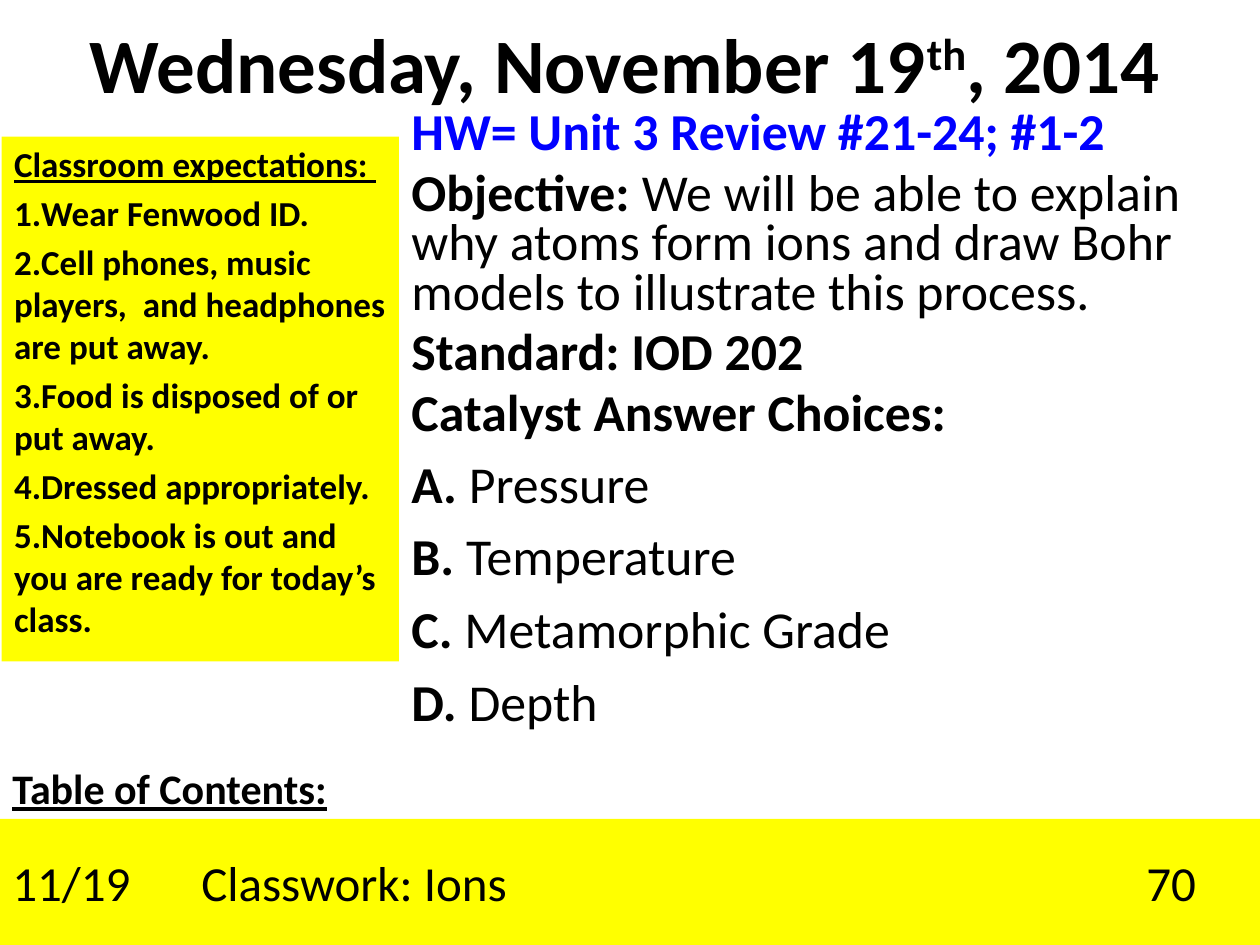
from dataclasses import dataclass, field

from lxml import etree
from pptx import Presentation
from pptx import util as u
from pptx.dml.color import RGBColor
from pptx.enum import shapes, text
from pptx.oxml import ns

BLACK = RGBColor(0, 0, 0)
BLUE = RGBColor(0, 0, 255)
YELLOW = RGBColor(255, 255, 0)
FONT = "Calibri"


@dataclass
class Run:
    words: str
    fmt: dict = field(default_factory=dict)
    raised: bool = False


@dataclass
class Para:
    runs: list[Run]
    fmt: dict = field(default_factory=dict)
    number: bool = False
    tabs: tuple[float, ...] = ()


@dataclass
class Box:
    left: float
    top: float
    width: float
    height: float
    size: float
    paras: list[Para]
    anchor: text.MSO_ANCHOR = text.MSO_ANCHOR.TOP
    fill: RGBColor | None = None


def apply(target, fmt: dict) -> None:
    for name, value in fmt.items():
        setattr(target, name, value)


def write(frame, box: Box) -> None:
    apply(frame, {"word_wrap": True, "auto_size": text.MSO_AUTO_SIZE.NONE,
                  "vertical_anchor": box.anchor})
    for i, para in enumerate(box.paras):
        p = frame.paragraphs[0] if i == 0 else frame.add_paragraph()
        apply(p, {"alignment": text.PP_ALIGN.LEFT} | para.fmt)
        props = p._p.get_or_add_pPr()
        if para.number:
            props.set("marL", "0")
            props.set("indent", "0")
            etree.SubElement(props, ns.qn("a:buAutoNum"), type="arabicPeriod")
        if para.tabs:
            stops = etree.SubElement(props, ns.qn("a:tabLst"))
            for pos in para.tabs:
                etree.SubElement(stops, ns.qn("a:tab"),
                                 pos=str(u.Pt(pos)), algn="l")
        for part in para.runs:
            run = p.add_run()
            run.text = part.words
            apply(run.font, {"name": FONT, "size": u.Pt(box.size)} | part.fmt)
            run.font.color.rgb = BLACK
            if part.fmt.get("bold") and part.words.startswith("HW="):
                run.font.color.rgb = BLUE
            if part.raised:
                run._r.get_or_add_rPr().set("baseline", "30000")


def draw(slide, box: Box) -> None:
    place = [u.Pt(n) for n in (box.left, box.top, box.width, box.height)]
    if box.fill is None:
        shape = slide.shapes.add_textbox(*place)
    else:
        shape = slide.shapes.add_shape(shapes.MSO_SHAPE.RECTANGLE, *place)
        shape.shadow.inherit = False
        shape.fill.solid()
        shape.fill.fore_color.rgb = box.fill
        shape.line.fill.background()
    write(shape.text_frame, box)


BOLD = {"bold": True}
LINED = {"bold": True, "underline": True}
TIGHT = {"line_spacing": 0.8, "space_before": u.Pt(6)}
LOOSE = {"space_before": u.Pt(6)}
RULE = {"space_before": u.Pt(4)}

TITLE = Box(36, 0, 642, 66, 44, [Para([
    Run("Wednesday, November 19", BOLD), Run("th", BOLD, raised=True),
    Run(", 2014", BOLD)], {"alignment": text.PP_ALIGN.CENTER})],
    text.MSO_ANCHOR.BOTTOM)

CHOICES = ["Pressure", "Temperature", "Metamorphic Grade", "Depth"]
LESSON = Box(228, 60, 492, 374, 29.6, [
    Para([Run("HW= Unit 3 Review #21-24; #1-2", BOLD)], TIGHT),
    Para([Run("Objective: ", BOLD),
          Run("We will be able to explain why atoms form ions and draw Bohr "
              "models to illustrate this process.")], TIGHT),
    Para([Run("Standard: IOD 202", BOLD)], TIGHT),
    Para([Run("Catalyst Answer Choices:", BOLD)], TIGHT),
    *(Para([Run(f"{key}. ", BOLD), Run(choice)], LOOSE)
      for key, choice in zip("ABCD", CHOICES)),
])

RULES = [
    "Wear Fenwood ID.",
    "Cell phones, music players,  and headphones are put away.",
    "Food is disposed of or put away.",
    "Dressed appropriately.",
    "Notebook is out and you are ready for today’s class.",
]
EXPECT = Box(1, 78, 227, 300, 20, [
    Para([Run("Classroom expectations: ", LINED)], RULE),
    *(Para([Run(rule, BOLD)], RULE, number=True) for rule in RULES),
], fill=YELLOW)

HEAD = Box(0, 402, 226, 66, 24, [Para([Run("Table of Contents:", LINED)])],
           text.MSO_ANCHOR.BOTTOM)
ENTRY = Box(0, 468, 720, 72, 28, [
    Para([Run("11/19\tClasswork: Ions\t70")], tabs=(108, 648))],
    text.MSO_ANCHOR.MIDDLE, YELLOW)


def main() -> None:
    deck = Presentation()
    apply(deck, {"slide_width": u.Pt(720), "slide_height": u.Pt(540)})
    slide = deck.slides.add_slide(deck.slide_layouts[5])
    title = slide.shapes.title
    apply(title, {name: u.Pt(getattr(TITLE, name))
                  for name in ("left", "top", "width", "height")})
    write(title.text_frame, TITLE)
    for box in (LESSON, EXPECT, HEAD, ENTRY):
        draw(slide, box)
    deck.save("out.pptx")


if __name__ == "__main__":
    main()
